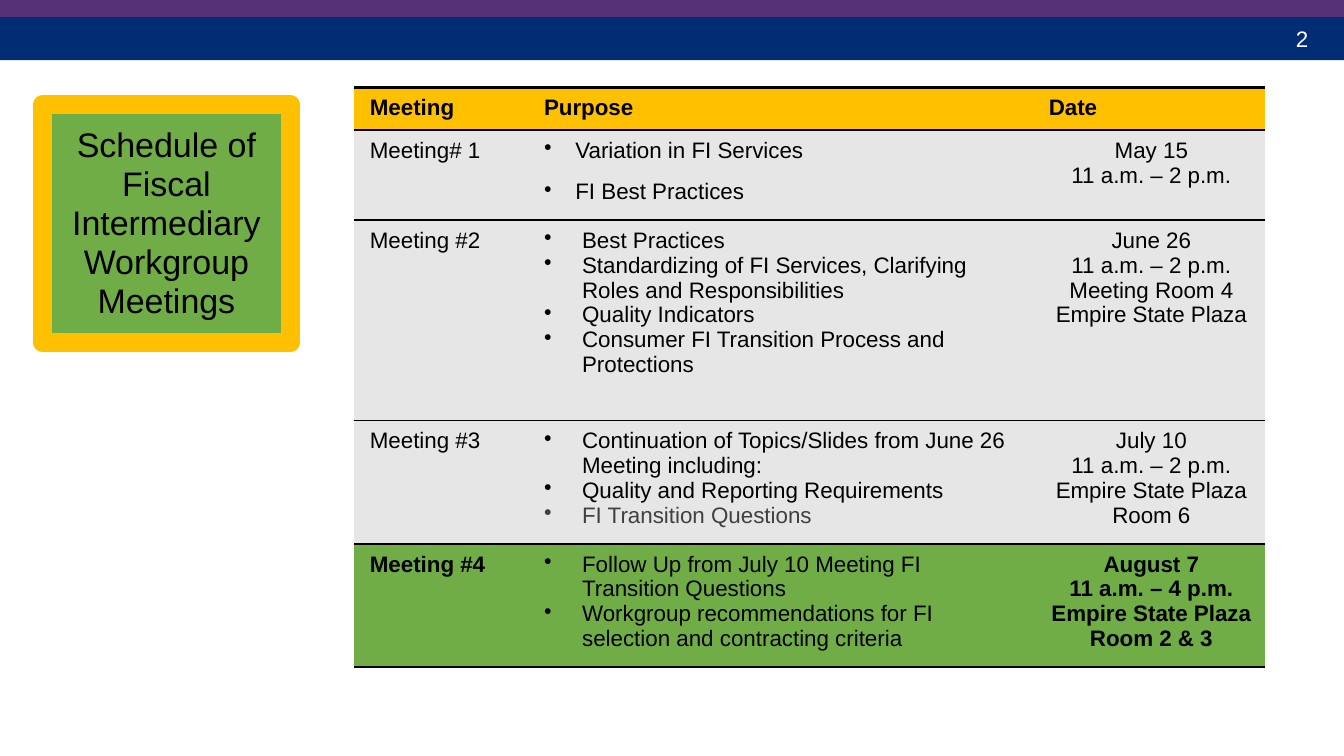
import dataclasses

import pptx
import pptx.dml.color
import pptx.enum.shapes
import pptx.enum.text
import pptx.oxml
import pptx.oxml.ns
import pptx.util
from pptx.util import Cm

ALIGN = pptx.enum.text.PP_ALIGN
ANCHOR = pptx.enum.text.MSO_ANCHOR


@dataclasses.dataclass(frozen=True)
class Theme:
    """Colours, font and type sizes of the slide."""
    font: str = "Arial"
    black: str = "000000"
    white: str = "FFFFFF"
    navy: str = "002D73"
    purple: str = "553278"
    green: str = "70AD47"
    gold: str = "FFC000"
    grey: str = "E7E6E6"
    muted: str = "404040"
    title_size: float = 24.3
    body_size: float = 16


THEME = Theme()
HEADERS = ("Meeting", "Purpose", "Date")
MEETINGS = (
    ("Meeting# 1",
     ("Variation in FI Services", "FI Best Practices"),
     ("May 15", "11 a.m. – 2 p.m.")),
    ("Meeting #2",
     ("Best Practices",
      "Standardizing of FI Services, Clarifying Roles and Responsibilities",
      "Quality Indicators",
      "Consumer FI Transition Process and Protections"),
     ("June 26", "11 a.m. – 2 p.m.", "Meeting Room 4", "Empire State Plaza")),
    ("Meeting #3",
     ("Continuation of Topics/Slides from June 26 Meeting including:",
      "Quality and Reporting Requirements",
      "FI Transition Questions"),
     ("July 10", "11 a.m. – 2 p.m.", "Empire State Plaza Room 6")),
    ("Meeting #4",
     ("Follow Up from July 10 Meeting FI Transition Questions",
      "Workgroup recommendations for FI selection and contracting criteria"),
     ("August 7", "11 a.m. – 4 p.m.", "Empire State Plaza Room 2 & 3")),
)
MUTED_PURPOSE = "FI Transition Questions"
COLUMN_WIDTHS = (4.39, 12.72, 5.84)
ROW_HEIGHTS = (1.02, 2.27, 5.05, 2.95, 2.95)
RULE_WEIGHTS = (2.25, 2.25, 1.5, 1, 1, 1.5)


def rgb(value):
    """Return the colour object for a hex value."""
    return pptx.dml.color.RGBColor.from_string(value)


def add_run(p, text, size=THEME.body_size, color=THEME.black, bold=False):
    """Add one styled run to a paragraph."""
    r = p.add_run()
    r.text = text
    r.font.name = THEME.font
    r.font.size = pptx.util.Pt(size)
    r.font.bold = bold
    r.font.color.rgb = rgb(color)


def add_block(s, left, top, width, height, fill):
    """Add a plain filled rectangle."""
    sp = s.shapes.add_shape(pptx.enum.shapes.MSO_SHAPE.RECTANGLE,
                            Cm(left), Cm(top), Cm(width), Cm(height))
    sp.shadow.inherit = False
    sp.fill.solid()
    sp.fill.fore_color.rgb = rgb(fill)
    sp.line.fill.background()
    return sp


def add_page_number(s, number):
    """Add the page number at the right of the header band."""
    sp = s.shapes.add_textbox(Cm(23.95), Cm(0.51), Cm(9.27), Cm(0.94))
    sp.text_frame.word_wrap = True
    p = sp.text_frame.paragraphs[0]
    p.alignment = ALIGN.RIGHT
    add_run(p, number, color=THEME.white)


def add_title(s, text):
    """Add the framed title panel."""
    sp = add_block(s, 1.07, 2.64, 6.25, 5.99, THEME.green)
    sp.line.color.rgb = rgb(THEME.gold)
    sp.line.width = pptx.util.Pt(13.75)
    tf = sp.text_frame
    tf.word_wrap = True
    tf.vertical_anchor = ANCHOR.MIDDLE
    p = tf.paragraphs[0]
    p.alignment = ALIGN.CENTER
    p.line_spacing = 0.96
    add_run(p, text, THEME.title_size)


def set_bullet(p, indent):
    """Give a paragraph a hanging round bullet."""
    pPr = p._p.get_or_add_pPr()
    pPr.set("marL", str(Cm(indent)))
    pPr.set("indent", str(-Cm(indent)))
    bullet = pptx.oxml.parse_xml(
        f'<a:buChar {pptx.oxml.ns.nsdecls("a")} char="•"/>')
    pPr.append(bullet)


def set_borders(cell, top, bottom):
    """Rule a cell above and below and leave its sides open."""
    tcPr = cell._tc.get_or_add_tcPr()
    for side, weight in (("L", 0), ("R", 0), ("T", top), ("B", bottom)):
        paint = (f'<a:solidFill><a:srgbClr val="{THEME.black}"/></a:solidFill>'
                 if weight else "<a:noFill/>")
        tcPr.append(pptx.oxml.parse_xml(
            f'<a:ln{side} {pptx.oxml.ns.nsdecls("a")} '
            f'w="{pptx.util.Pt(weight)}">{paint}</a:ln{side}>'))


def fill_cell(cell, lines, row, bold=False, align=ALIGN.LEFT, indent=0, gap=0):
    """Style a table cell and write its paragraphs."""
    fills = (THEME.gold, THEME.grey, THEME.grey, THEME.grey, THEME.green)
    set_borders(cell, RULE_WEIGHTS[row], RULE_WEIGHTS[row + 1])
    cell.fill.solid()
    cell.fill.fore_color.rgb = rgb(fills[row])
    cell.margin_left, cell.margin_right = Cm(0.39), Cm(0.28)
    cell.margin_top = cell.margin_bottom = Cm(0.2)
    tf = cell.text_frame
    for i, line in enumerate(lines):
        p = tf.add_paragraph() if i else tf.paragraphs[0]
        if indent:
            set_bullet(p, indent)
        p.alignment = align
        if i and gap:
            p.space_before = pptx.util.Pt(gap)
        color = THEME.muted if line == MUTED_PURPOSE else THEME.black
        add_run(p, line, color=color, bold=bold)


def add_schedule(s):
    """Add the table of meetings."""
    frame = s.shapes.add_table(
        len(ROW_HEIGHTS), len(COLUMN_WIDTHS), Cm(8.93), Cm(2.2),
        Cm(sum(COLUMN_WIDTHS)), Cm(sum(ROW_HEIGHTS)))
    table = frame.table
    table.first_row = table.horz_banding = False
    for column, width in zip(table.columns, COLUMN_WIDTHS):
        column.width = Cm(width)
    for row, height in zip(table.rows, ROW_HEIGHTS):
        row.height = Cm(height)
    for col, header in enumerate(HEADERS):
        fill_cell(table.cell(0, col), [header], 0, bold=True)
    for row, (meeting, purposes, dates) in enumerate(MEETINGS, 1):
        first, last = row == 1, row == len(MEETINGS)
        fill_cell(table.cell(row, 0), [meeting], row, bold=last)
        fill_cell(table.cell(row, 1), purposes, row,
                  indent=0.79 if first else 0.96, gap=12 if first else 0)
        fill_cell(table.cell(row, 2), dates, row, bold=last,
                  align=ALIGN.CENTER)


def main():
    """Build the slide and save it."""
    prs = pptx.Presentation()
    prs.slide_width, prs.slide_height = Cm(33.87), Cm(19.05)
    s = prs.slides.add_slide(prs.slide_layouts[6])
    add_block(s, 0, 0.43, 33.87, 1.09, THEME.navy)
    add_block(s, 0, 0, 33.87, 0.43, THEME.purple)
    add_page_number(s, "2")
    add_title(s, "Schedule of Fiscal Intermediary Workgroup Meetings")
    add_schedule(s)
    prs.save("out.pptx")


if __name__ == "__main__":
    main()
